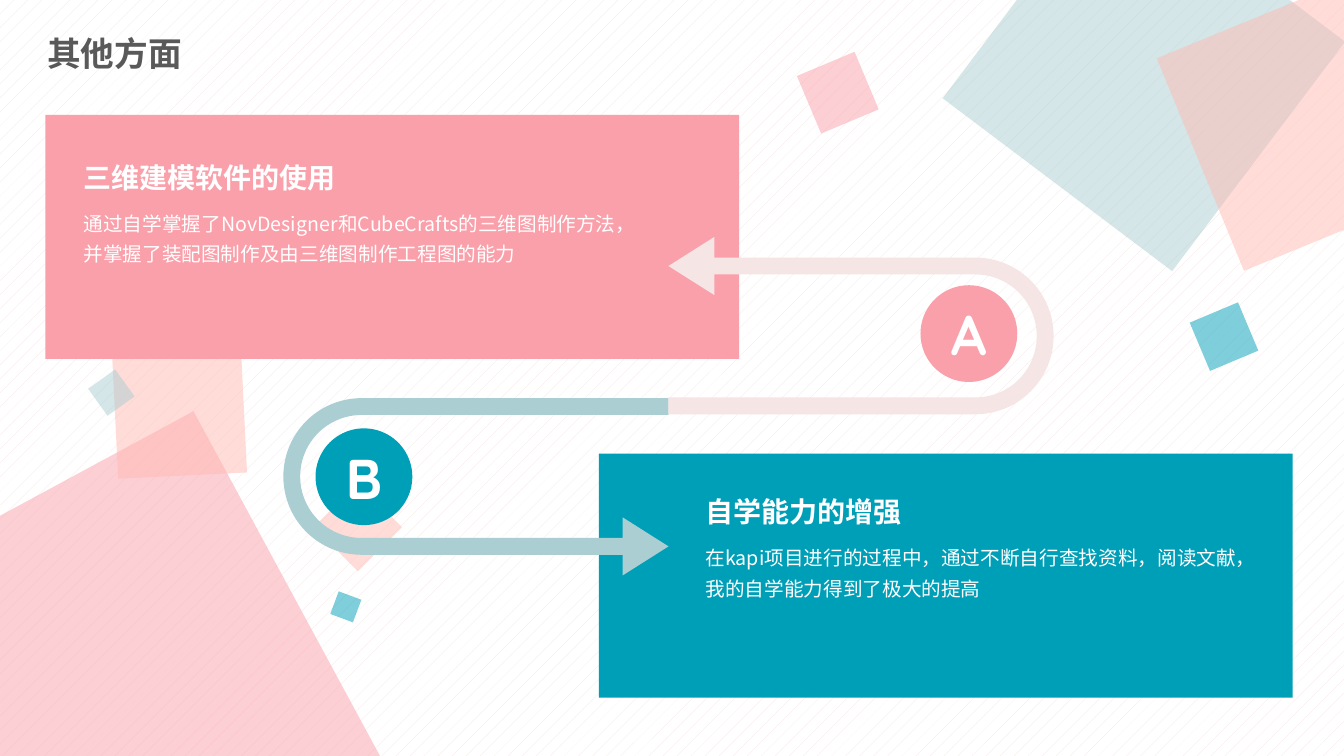
from dataclasses import dataclass

from lxml.etree import SubElement
from pptx import Presentation
from pptx.dml.color import RGBColor
from pptx.enum.dml import MSO_PATTERN
from pptx.enum.shapes import MSO_SHAPE
from pptx.enum.text import MSO_ANCHOR, MSO_AUTO_SIZE, PP_ALIGN
from pptx.oxml.ns import qn
from pptx.shapes.autoshape import Shape
from pptx.slide import Slide
from pptx.util import Inches, Pt

COLOURS = {
    "pink": "FAA0AA",
    "peach": "FFBBB3",
    "mist": "AACED2",
    "teal": "009FB8",
    "blush": "F5E5E4",
    "white": "FFFFFF",
    "grey": "595959",
}
CHINESE_FONT = "Noto Sans CJK SC"
LATIN_FONT = "Quicksand"
UTURN_ADJUSTMENTS = (0.095, 0.164, 0.259, 0.441, 1)
PANEL_SIZE = (6.88, 2.42)
ARROW_SIZE = (1.76, 3.82)
BADGE_SIZE = (0.96, 0.96)
HEADING_SIZE = (3.15, 0.49)
BODY_SIZE = (5.61, 0.68)
BODY_DROP = 0.54


@dataclass(frozen=True)
class Confetti:
    left: float
    top: float
    side: float
    rotation: float
    colour: str


@dataclass(frozen=True)
class Topic:
    letter: str
    heading: str
    body: str
    colour: str
    arrow_colour: str
    arrow_rotation: float
    panel_at: tuple[float, float]
    arrow_at: tuple[float, float]
    badge_at: tuple[float, float]
    heading_at: tuple[float, float]


CONFETTI = (
    Confetti(-0.93, 4.8, 4.06, 331.6, "pink"),
    Confetti(1.14, 3.44, 1.28, 357.2, "peach"),
    Confetti(3.24, 4.92, 0.62, 315, "peach"),
    Confetti(0.94, 3.73, 0.33, 324.4, "mist"),
    Confetti(9.92, -0.73, 2.85, 37, "mist"),
    Confetti(11.82, 0.06, 2.28, 337.7, "peach"),
    Confetti(8, 0.61, 0.62, 337.2, "pink"),
    Confetti(11.88, 3.08, 0.52, 337.2, "teal"),
    Confetti(3.31, 5.9, 0.24, 290.5, "teal"),
)

TOPICS = (
    Topic("B", "自学能力的增强",
          "在kapi项目进行的过程中，通过不断自行查找资料，阅读文献，我的自学能力得到了极大的提高",
          "teal", "mist", 270, (5.94, 4.5), (3.84, 2.92), (3.13, 4.25), (6.9, 4.76)),
    Topic("A", "三维建模软件的使用",
          "通过自学掌握了NovDesigner和CubeCrafts的三维图制作方法，并掌握了装配图制作及由三维图制作工程图的能力",
          "pink", "blush", 90, (0.45, 1.14), (7.66, 1.32), (9.13, 2.83), (0.73, 1.44)),
)


def rgb(colour: str) -> RGBColor:
    return RGBColor.from_string(COLOURS[colour])


def write(shape: Shape, text: str, font_format: dict, paragraph_format: dict,
          frame_format: dict, colour: str = "white") -> None:
    frame = shape.text_frame
    paragraph = frame.paragraphs[0]
    run = paragraph.add_run()
    run.text = text
    run.font.color.rgb = rgb(colour)
    for target, values in ((frame, frame_format), (paragraph, paragraph_format),
                           (run.font, font_format)):
        for attribute, value in values.items():
            setattr(target, attribute, value)
    for properties in shape.element.iter(qn("a:rPr")):
        SubElement(properties, qn("a:ea"), typeface=CHINESE_FONT)


def draw(slide: Slide, kind: MSO_SHAPE, position: tuple[float, float],
         size: tuple[float, float], colour: str, rotation: float = 0) -> Shape:
    shape = slide.shapes.add_shape(kind, *map(Inches, position + size))
    shape.fill.solid()
    shape.fill.fore_color.rgb = rgb(colour)
    shape.line.fill.background()
    shape.shadow.inherit = False
    shape.rotation = rotation
    return shape


def draw_confetti(slide: Slide, piece: Confetti) -> None:
    square = draw(slide, MSO_SHAPE.RECTANGLE, (piece.left, piece.top),
                  (piece.side, piece.side), piece.colour, piece.rotation)
    fill_colour = square.element.spPr.find(f"{qn('a:solidFill')}/{qn('a:srgbClr')}")
    SubElement(fill_colour, qn("a:alpha"), val="50000")


def draw_path(slide: Slide, topic: Topic) -> None:
    draw(slide, MSO_SHAPE.RECTANGLE, topic.panel_at, PANEL_SIZE, topic.colour)
    arrow = draw(slide, MSO_SHAPE.U_TURN_ARROW, topic.arrow_at, ARROW_SIZE,
                 topic.arrow_colour, topic.arrow_rotation)
    for index, value in enumerate(UTURN_ADJUSTMENTS):
        arrow.adjustments[index] = value
    arrow.element.spPr.find(qn("a:xfrm")).set("flipH", "1")


def draw_text(slide: Slide, topic: Topic) -> None:
    badge = draw(slide, MSO_SHAPE.OVAL, topic.badge_at, BADGE_SIZE, topic.colour)
    write(badge, topic.letter, {"name": LATIN_FONT, "size": Pt(40), "bold": True},
          {"alignment": PP_ALIGN.CENTER}, {"vertical_anchor": MSO_ANCHOR.MIDDLE})
    left, top = topic.heading_at
    blocks = (
        (topic.body, top + BODY_DROP, BODY_SIZE,
         {"name": CHINESE_FONT, "size": Pt(14)}),
        (topic.heading, top, HEADING_SIZE,
         {"name": LATIN_FONT, "size": Pt(20), "bold": True}),
    )
    for text, block_top, size, font_format in blocks:
        box = slide.shapes.add_textbox(*map(Inches, (left, block_top) + size))
        write(box, text, font_format, {"line_spacing": 1.3},
              {"word_wrap": True, "auto_size": MSO_AUTO_SIZE.SHAPE_TO_FIT_TEXT})


def format_title(slide: Slide) -> None:
    title = slide.shapes.title
    place = {"left": 0.37, "top": 0.26, "width": 6.13, "height": 0.58}
    for attribute, value in place.items():
        setattr(title, attribute, Inches(value))
    write(title, "其他方面", {"name": CHINESE_FONT, "size": Pt(24), "bold": True},
          {"alignment": PP_ALIGN.LEFT, "line_spacing": 0.9, "space_before": Pt(10)},
          {"vertical_anchor": MSO_ANCHOR.MIDDLE, "auto_size": MSO_AUTO_SIZE.NONE}, "grey")


def main() -> None:
    presentation = Presentation()
    presentation.slide_width = Inches(13.33)
    presentation.slide_height = Inches(7.5)
    slide = presentation.slides.add_slide(presentation.slide_layouts[5])
    backdrop = slide.background.fill
    backdrop.patterned()
    backdrop.pattern = MSO_PATTERN.PERCENT_5
    backdrop.fore_color.rgb = rgb("blush")
    backdrop.back_color.rgb = rgb("white")
    format_title(slide)
    for piece in CONFETTI:
        draw_confetti(slide, piece)
    for topic in TOPICS:
        draw_path(slide, topic)
    for topic in reversed(TOPICS):
        draw_text(slide, topic)
    presentation.save("out.pptx")


if __name__ == "__main__":
    main()
